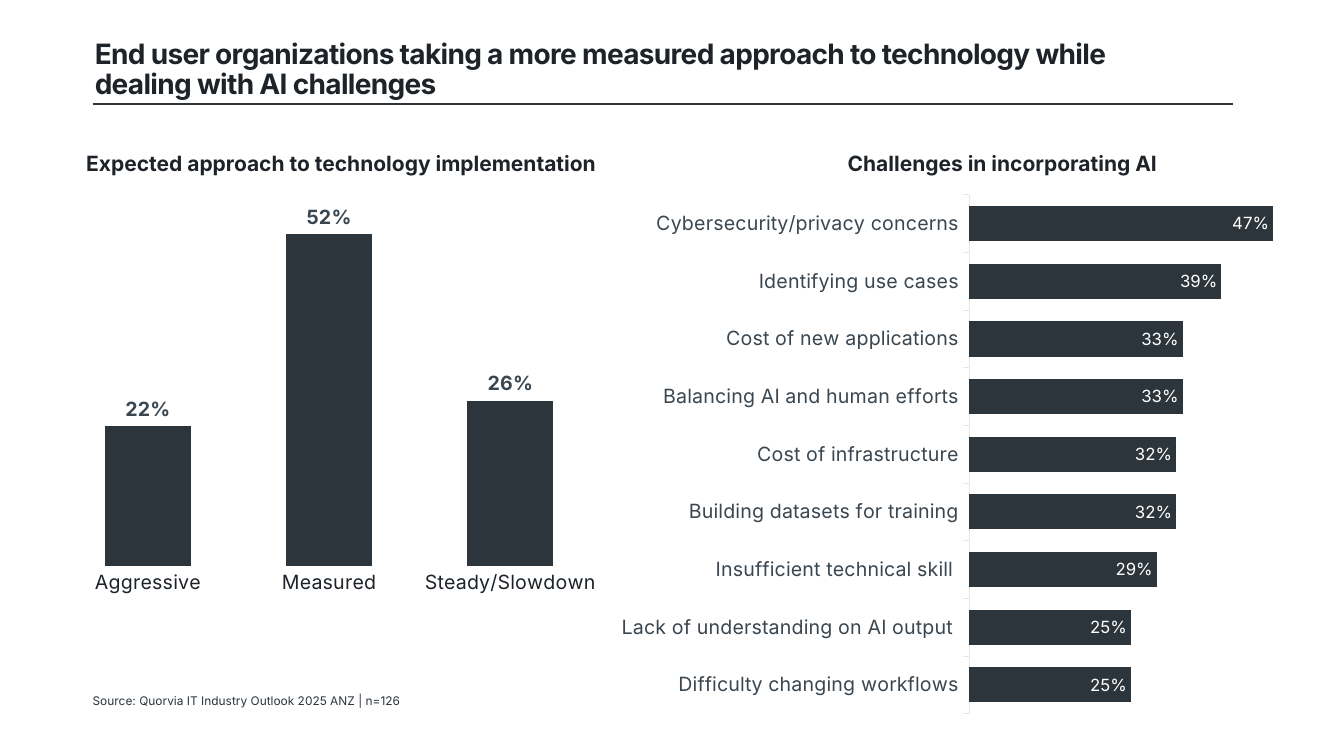
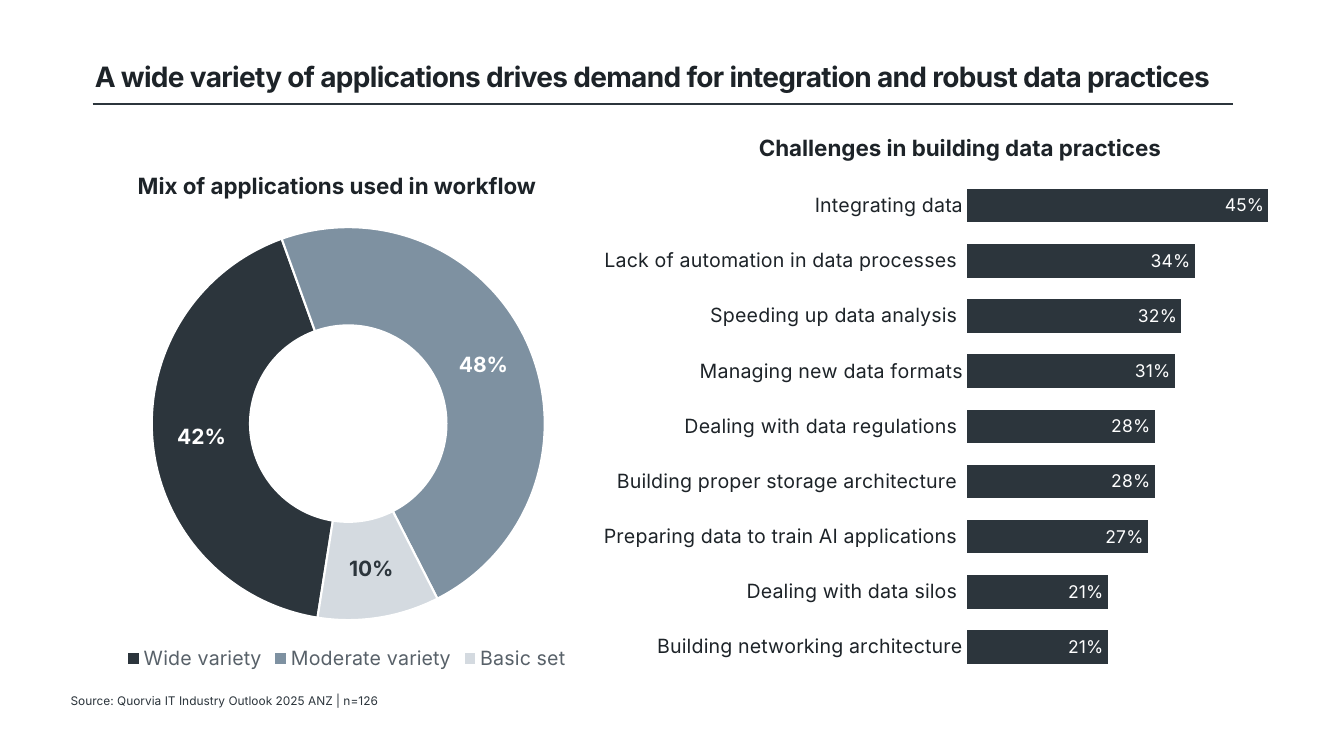
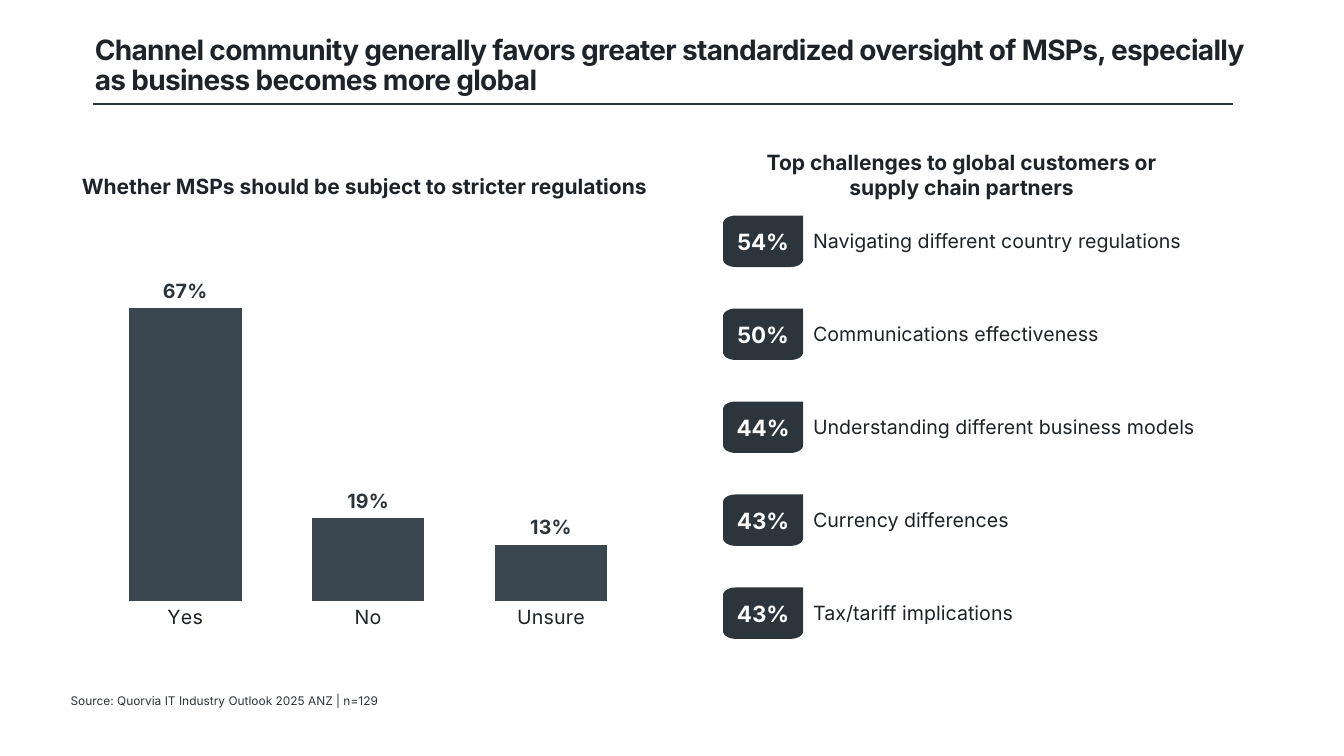
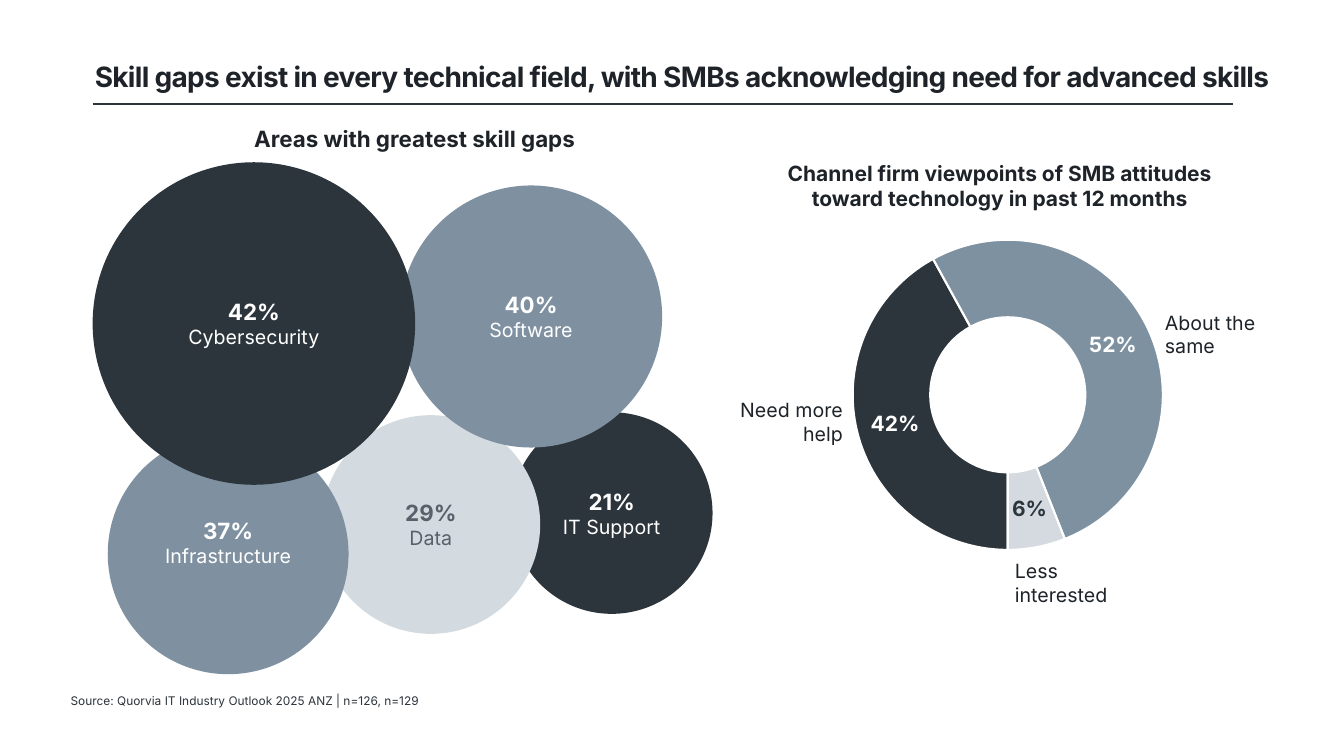
"""Build four slides on technology approach, data practices, regulation and skill gaps."""
import math

from lxml import etree
from pptx import Presentation
from pptx.chart.data import CategoryChartData
from pptx.dml.color import RGBColor
from pptx.enum.chart import XL_CHART_TYPE, XL_LABEL_POSITION, XL_LEGEND_POSITION, XL_TICK_MARK
from pptx.enum.shapes import MSO_CONNECTOR, MSO_SHAPE
from pptx.enum.text import MSO_ANCHOR, MSO_AUTO_SIZE, PP_ALIGN
from pptx.oxml.ns import qn
from pptx.util import Pt

COLUMN, BAR = XL_CHART_TYPE.COLUMN_CLUSTERED, XL_CHART_TYPE.BAR_CLUSTERED
DOUGHNUT = XL_CHART_TYPE.DOUGHNUT
OUT_END, IN_END = XL_LABEL_POSITION.OUTSIDE_END, XL_LABEL_POSITION.INSIDE_END
TICK_OUT, TICK_NONE = XL_TICK_MARK.OUTSIDE, XL_TICK_MARK.NONE
LEGEND_BOTTOM = XL_LEGEND_POSITION.BOTTOM
LEFT, CENTER, RIGHT = PP_ALIGN.LEFT, PP_ALIGN.CENTER, PP_ALIGN.RIGHT
MIDDLE = MSO_ANCHOR.MIDDLE
FIXED, GROW = MSO_AUTO_SIZE.NONE, MSO_AUTO_SIZE.SHAPE_TO_FIT_TEXT

FONT = "Inter"
INK, DARK, SLATE, GREY = "1D2328", "2C353C", "3A4650", "586169"
STEEL, PALE, RULE, WHITE = "7E91A1", "D4DAE0", "E5E7E9", "FFFFFF"
BUBBLE_STEEL, BUBBLE_PALE = "7F91A1", "D3DBE0"
SLICES = [(DARK, WHITE), (STEEL, WHITE), (PALE, DARK)]
NO_INSETS = dict.fromkeys(("margin_left", "margin_top", "margin_right", "margin_bottom"), 0)

SOURCE = "Source: Quorvia IT Industry Outlook 2025 ANZ | "
TITLES = [
    ("End user organizations taking a more measured approach to technology while "
     "dealing with AI challenges", (60.5, 25.2, 805, 50.4), "n=126", 66.2),
    ("A wide variety of applications drives demand for integration and robust data practices",
     (60.5, 31, 857, 50.4), "n=126", 50.4),
    ("Channel community generally favors greater standardized oversight of MSPs, especially "
     "as business becomes more global", (60.5, 22.3, 857, 50.4), "n=129", 50.4),
    ("Skill gaps exist in every technical field, with SMBs acknowledging need for advanced skills",
     (60.5, 31, 857, 50.4), "n=126, n=129", 50.4),
]
HEADINGS = [
    [("Expected approach to technology implementation", (45.4, 103.7, 396.7, 25), 15),
     ("Challenges in incorporating AI", (517.7, 103.7, 396.7, 25), 15)],
    [("Mix of applications used in workflow", (89.3, 119.5, 303, 26.6), 16),
     ("Challenges in building data practices", (517.7, 92.2, 336.2, 26.6), 16)],
    [("Whether MSPs should be subject to stricter regulations", (50.4, 120.2, 420, 25), 15),
     ("Top challenges to global customers or supply chain partners", (536.4, 103, 301, 44), 15)],
    [("Areas with greatest skill gaps", (100, 85.7, 392.4, 26.6), 16),
     ("Channel firm viewpoints of SMB attitudes toward technology in past 12 months",
      (553.7, 110.9, 321, 44), 15)],
]
APPROACH = [("Aggressive", 0.22), ("Measured", 0.52), ("Steady/Slowdown", 0.26)]
AI_CHALLENGES = [
    ("Cybersecurity/privacy concerns", 0.47), ("Identifying use cases", 0.39),
    ("Cost of new applications", 0.33), ("Balancing AI and human efforts", 0.33),
    ("Cost of infrastructure", 0.32), ("Building datasets for training", 0.32),
    ("Insufficient technical skill ", 0.29), ("Lack of understanding on AI output ", 0.25),
    ("Difficulty changing workflows", 0.25),
]
APPLICATION_MIX = [("Wide variety", 0.42), ("Moderate variety", 0.48), ("Basic set", 0.1)]
DATA_CHALLENGES = [
    ("Integrating data", 0.45), ("Lack of automation in data processes ", 0.34),
    ("Speeding up data analysis ", 0.32), ("Managing new data formats", 0.31),
    ("Dealing with data regulations ", 0.28), ("Building proper storage architecture ", 0.28),
    ("Preparing data to train AI applications ", 0.27), ("Dealing with data silos ", 0.21),
    ("Building networking architecture", 0.21),
]
REGULATION = [("Yes", 0.67), ("No", 0.19), ("Unsure", 0.13)]
GLOBAL_CHALLENGES = [
    ("54%", "Navigating different country regulations"), ("50%", "Communications effectiveness"),
    ("44%", "Understanding different business models"), ("43%", "Currency differences"),
    ("43%", "Tax/tariff implications"),
]
BADGE_LEFT, BADGE_TOP, BADGE_WIDTH, BADGE_HEIGHT, BADGE_PITCH = 516.5, 154, 57.2, 36.7, 66.4
SKILL_GAPS = [
    ("21%", "IT Support", (365, 294.5, 144), DARK, WHITE, 0),
    ("29%", "Data", (229.7, 296.6, 156.2), BUBBLE_PALE, GREY, 0),
    ("37%", "Infrastructure", (77, 309.6, 172), BUBBLE_STEEL, WHITE, 17),
    ("40%", "Software", (285.8, 132.5, 187.2), BUBBLE_STEEL, WHITE, 0),
    ("42%", "Cybersecurity", (66.2, 115.9, 230.4), DARK, WHITE, 0),
]
ATTITUDES = [("1", 0.42), ("2", 0.52), ("3", 0.06)]
ATTITUDE_LABELS = [
    ("About the same", (825, 218.2, 99.4, 41), LEFT),
    ("Less interested", (717.8, 396, 99.4, 41), LEFT),
    ("Need more help", (509.8, 280.8, 99.4, 41), RIGHT),
]


def rgb(value):
    return RGBColor.from_string(value)


def points(box):
    return [Pt(length) for length in box]


def assign(target, **values):
    for name, value in values.items():
        setattr(target, name, value)


def style(font, size, color, bold=False):
    assign(font, name=FONT, size=Pt(size), bold=bold)
    font.color.rgb = rgb(color)


def paint(shape, color):
    shape.shadow.inherit = False
    shape.fill.solid()
    shape.fill.fore_color.rgb = rgb(color)
    shape.line.fill.background()


def write(frame, lines, align=LEFT, **settings):
    assign(frame, word_wrap=True, **settings)
    for index, (text, size, color, bold) in enumerate(lines):
        paragraph = frame.add_paragraph() if index else frame.paragraphs[0]
        paragraph.alignment = align
        run = paragraph.add_run()
        run.text = text
        style(run.font, size, color, bold)


def add_text(slide, box, text, size, color=INK, bold=False, align=LEFT, **settings):
    frame = slide.shapes.add_textbox(*points(box)).text_frame
    write(frame, [(text, size, color, bold)], align, **{"auto_size": GROW, **settings})


def add_frame(slide, title, title_box, sample, source_left, headings):
    holder = slide.shapes.title
    assign(holder, **dict(zip(("left", "top", "width", "height"), points(title_box))))
    write(holder.text_frame, [(title, 20, INK, True)],
          auto_size=FIXED, vertical_anchor=MIDDLE)
    paragraph = holder.text_frame.paragraphs[0]
    paragraph.line_spacing = 0.9
    paragraph.runs[0].font._element.set("spc", "-50")
    rule = slide.shapes.add_connector(MSO_CONNECTOR.STRAIGHT, *points((66.2, 74.2, 880.6, 74.2)))
    rule.line.width = Pt(1)
    rule.line.color.rgb = rgb(DARK)
    etree.SubElement(rule._element.spPr, qn("a:effectLst"))
    add_text(slide, (source_left, 493.2, 504, 14.4), SOURCE + sample, 8.5, DARK,
             auto_size=FIXED, vertical_anchor=MIDDLE, **NO_INSETS)
    for text, box, size in headings:
        add_text(slide, box, text, size, bold=True, align=CENTER)


def add_chart(slide, kind, box, rows, layout):
    data = CategoryChartData(number_format="0%")
    data.categories = [label for label, _ in rows]
    data.add_series("Series 1", [value for _, value in rows])
    chart = slide.shapes.add_chart(kind, *points(box), data).chart
    assign(chart, has_title=False, has_legend=False)
    style(chart.font, 14, GREY)
    plot_area = chart._chartSpace.chart.plotArea
    for old in plot_area.findall(qn("c:layout")):
        plot_area.remove(old)
    outer = etree.Element(qn("c:layout"))
    manual = etree.SubElement(outer, qn("c:manualLayout"))
    entries = [("layoutTarget", "inner"), ("xMode", "edge"), ("yMode", "edge"),
               *zip("xywh", layout)]
    for tag, value in entries:
        etree.SubElement(manual, qn("c:" + tag)).set("val", str(value))
    plot_area.insert(0, outer)
    return chart


def label_values(series, size, color, bold):
    labels = series.data_labels
    assign(labels, show_value=True, show_percentage=False, number_format="0%",
           number_format_is_linked=False)
    style(labels.font, size, color, bold)
    return labels


def add_bars(slide, kind, box, rows, layout, maximum, gap, label, overlap=0, fill=DARK,
             axis_color=INK, axis_line=None):
    if kind == BAR:
        rows = rows[::-1]
    chart = add_chart(slide, kind, box, rows, layout)
    assign(chart.value_axis, visible=False, has_major_gridlines=False,
           minimum_scale=0, maximum_scale=maximum)
    axis = chart.category_axis
    assign(axis, has_major_gridlines=False, minor_tick_mark=TICK_NONE,
           major_tick_mark=TICK_OUT if axis_line else TICK_NONE)
    style(axis.tick_labels.font, 14, axis_color)
    if axis_line:
        axis.format.line.width = Pt(0.75)
        axis.format.line.color.rgb = rgb(axis_line)
    else:
        axis.format.line.fill.background()
    plot = chart.plots[0]
    assign(plot, vary_by_categories=False, gap_width=gap, overlap=overlap)
    series = plot.series[0]
    series.invert_if_negative = False
    series.format.fill.solid()
    series.format.fill.fore_color.rgb = rgb(fill)
    if kind == COLUMN:
        series.format.line.width = Pt(0.75)
        series.format.line.color.rgb = rgb(WHITE)
    label_values(series, *label).position = OUT_END if kind == COLUMN else IN_END


def add_doughnut(slide, box, rows, layout, start, legend=False):
    chart = add_chart(slide, DOUGHNUT, box, rows, layout)
    plot = chart.plots[0]
    plot.vary_by_categories = True
    for tag, value in (("firstSliceAng", start), ("holeSize", 54)):
        node = plot._element.find(qn("c:" + tag))
        if node is None:
            node = etree.SubElement(plot._element, qn("c:" + tag))
        node.set("val", str(value))
    series = plot.series[0]
    label_values(series, 15, DARK, True)
    for index, (fill, label_color) in enumerate(SLICES):
        point = series.points[index]
        point.format.fill.solid()
        point.format.fill.fore_color.rgb = rgb(fill)
        point.format.line.width = Pt(1.5)
        point.format.line.color.rgb = rgb(WHITE)
        style(point.data_label.font, 15, label_color, True)
    if legend:
        chart.has_legend = True
        assign(chart.legend, position=LEGEND_BOTTOM, include_in_layout=False)
        style(chart.legend.font, 14, GREY)


def add_badge(slide, left, top, text):
    right, bottom, rx, ry, steps = left + BADGE_WIDTH, top + BADGE_HEIGHT, 9, 5.5, 8
    corners = [(right - rx, bottom - ry, 0), (left + rx, bottom - ry, 90),
               (left + rx, top + ry, 180)]
    outline = []
    for x, y, first in corners:
        for step in range(steps + 1):
            angle = math.radians(first + 90 * step / steps)
            outline.append(points((x + rx * math.cos(angle), y + ry * math.sin(angle))))
    builder = slide.shapes.build_freeform(*points((right, top)))
    builder.add_line_segments(outline, close=True)
    badge = builder.convert_to_shape()
    paint(badge, DARK)
    write(badge.text_frame, [(text, 16, WHITE, True)], CENTER, vertical_anchor=MIDDLE,
          **NO_INSETS)


def add_bubble(slide, share, area, circle, fill, color, lift):
    left, top, diameter = circle
    bubble = slide.shapes.add_shape(MSO_SHAPE.OVAL, *points((left, top, diameter, diameter)))
    paint(bubble, fill)
    write(bubble.text_frame, [(share, 16, color, True), (area, 14, color, False)], CENTER,
          vertical_anchor=MIDDLE, margin_bottom=Pt(3.6 + lift))


def main():
    deck = Presentation()
    assign(deck, slide_width=Pt(960), slide_height=Pt(540))
    slides = [deck.slides.add_slide(deck.slide_layouts[5]) for _ in TITLES]
    for slide, frame, headings in zip(slides, TITLES, HEADINGS):
        add_frame(slide, *frame, headings)
    approach, data_practices, oversight, skills = slides

    add_bars(approach, COLUMN, (41, 145.4, 388.8, 324.7), APPROACH, (0, 0.038, 0.999, 0.761),
             0.54, 108, (14, SLATE, True))
    add_bars(approach, BAR, (396, 129.6, 553.7, 384.5), AI_CHALLENGES,
             (0.535, 0.025, 0.409, 0.964), 0.49, 64, (12, WHITE, False), overlap=-7,
             axis_color=SLATE, axis_line=RULE)

    add_doughnut(data_practices, (15.8, 153.4, 463.7, 328.3), APPLICATION_MIX,
                 (0.19, 0.027, 0.625, 0.855), 189, legend=True)
    add_bars(data_practices, BAR, (393, 118, 553.7, 368), DATA_CHALLENGES,
             (0.538, 0.025, 0.406, 0.964), 0.47, 64, (12.5, WHITE, False), overlap=-7)

    add_bars(oversight, COLUMN, (67, 161.3, 392.4, 324.7), REGULATION,
             (0, 0.035, 0.999, 0.791), 0.82, 61, (14, DARK, True), fill=SLATE)
    for index, (share, challenge) in enumerate(GLOBAL_CHALLENGES):
        top = BADGE_TOP + index * BADGE_PITCH
        add_badge(oversight, BADGE_LEFT, top, share)
        add_text(oversight, (BADGE_LEFT + BADGE_WIDTH, top + 6, 305, 24.5), challenge, 14)

    for gap in SKILL_GAPS:
        add_bubble(skills, *gap)
    add_doughnut(skills, (542.2, 157, 355, 259.2), ATTITUDES, (0.188, 0.055, 0.625, 0.855), 180)
    for text, box, align in ATTITUDE_LABELS:
        add_text(skills, box, text, 14, align=align)

    deck.save("out.pptx")


if __name__ == "__main__":
    main()
